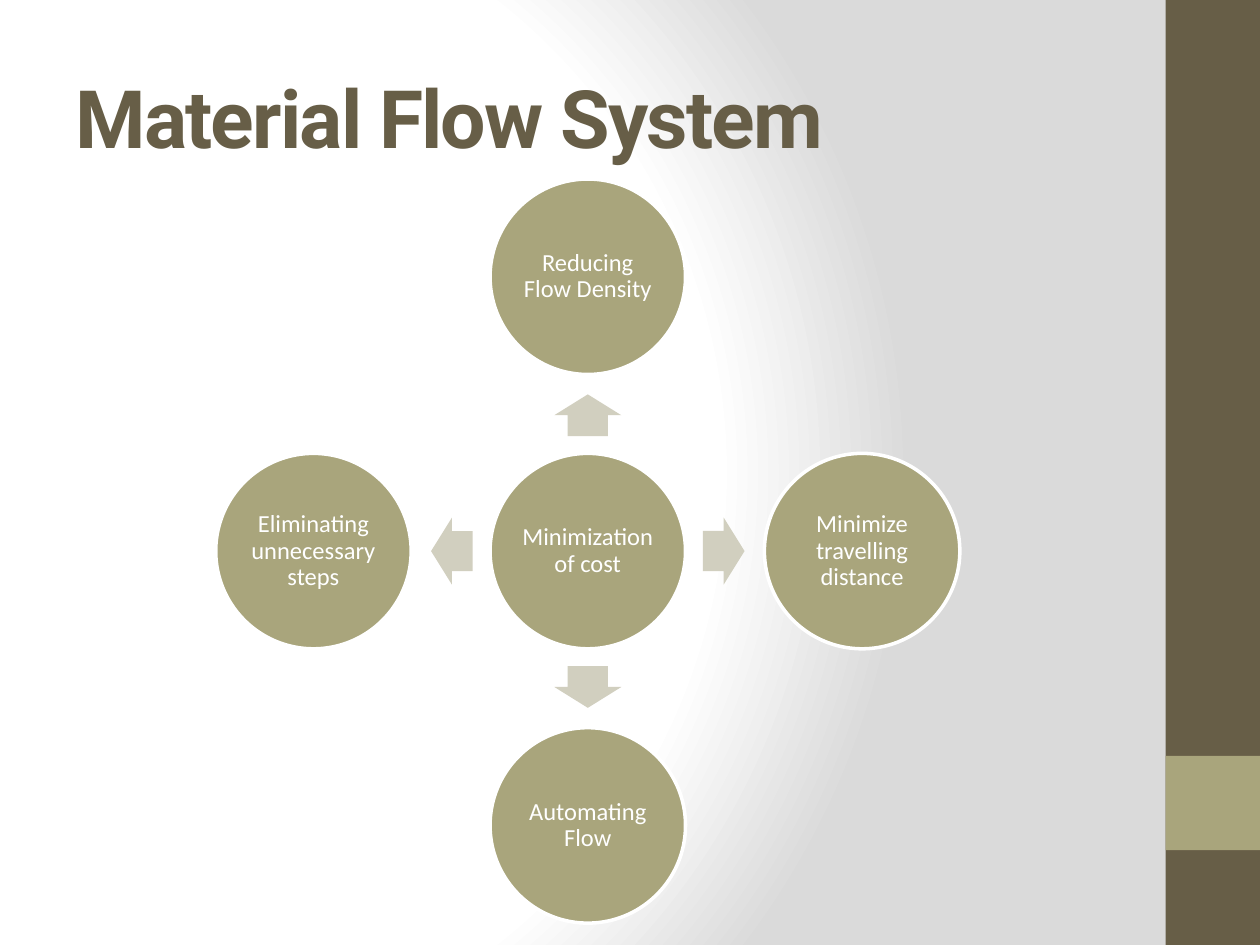
from pptx import Presentation
from pptx.dml.color import RGBColor
from pptx.enum.shapes import MSO_SHAPE as Kind
from pptx.enum.text import MSO_ANCHOR as Anchor, PP_ALIGN as Align
from pptx.oxml import parse_xml
from pptx.oxml.ns import nsdecls
from pptx.util import Cm, Pt

BROWN, OLIVE, PALE, WHITE = "675E47", "A9A57C", "D1CFBF", "FFFFFF"


def paint(item, tint):
    item.rgb = RGBColor.from_string(tint)


class Deck:
    """Holds the style and the current slide, and draws each kind of element."""

    def __init__(self, wide, high):
        self.file = Presentation()
        self.file.slide_width, self.file.slide_height = Cm(wide), Cm(high)
        self.slide = self.file.slides.add_slide(self.file.slide_layouts[6])

    def glow(self, stops):
        marks = "".join(
            f'<a:gs pos="{spot * 1000}"><a:srgbClr val="{tint}"/></a:gs>'
            for spot, tint in stops
        )
        back = parse_xml(
            f'<p:bg {nsdecls("p", "a")}><p:bgPr><a:gradFill rotWithShape="1">'
            f'<a:gsLst>{marks}</a:gsLst><a:path path="circle">'
            '<a:fillToRect l="20000" t="50000" r="100000" b="50000"/></a:path>'
            "</a:gradFill><a:effectLst/></p:bgPr></p:bg>"
        )
        self.slide.element.cSld.insert(0, back)

    def shape(self, kind, left, top, wide, high, tint):
        form = self.slide.shapes.add_shape(
            kind, Cm(left), Cm(top), Cm(wide), Cm(high)
        )
        form.shadow.inherit = False
        form.fill.solid()
        paint(form.fill.fore_color, tint)
        form.line.fill.background()
        return form

    def label(self, frame, text, font, size, tint, bold=False):
        frame.word_wrap = True
        frame.vertical_anchor = Anchor.MIDDLE
        run = frame.paragraphs[0].add_run()
        run.text = text
        run.font.name, run.font.size, run.font.bold = font, Pt(size), bold
        paint(run.font.color, tint)
        return run

    def title(self, text, left, top, wide, high):
        box = self.slide.shapes.add_textbox(Cm(left), Cm(top), Cm(wide), Cm(high))
        run = self.label(box.text_frame, text, "Roboto", 46, BROWN, True)
        run.font._element.set("spc", "-100")

    def disc(self, text, x, y, size=3.94):
        form = self.shape(
            Kind.OVAL, x - size / 2, y - size / 2, size, size, OLIVE
        )
        form.line.width = Pt(2)
        paint(form.line.color, WHITE)
        frame = form.text_frame
        frame.margin_left = frame.margin_right = Cm(0.05)
        frame.margin_top = frame.margin_bottom = Cm(0.05)
        self.label(frame, text, "Calibri", 14, WHITE)
        frame.paragraphs[0].alignment = Align.CENTER
        frame.paragraphs[0].line_spacing = 0.9

    def arrow(self, x, y, turn, wide=0.84, high=1.35):
        form = self.shape(
            Kind.RIGHT_ARROW, x - wide / 2, y - high / 2, wide, high, PALE
        )
        form.adjustments[0], form.adjustments[1] = 0.6, 0.5
        form.rotation = turn


def main():
    deck = Deck(25.4, 19.05)
    deck.glow([(0, WHITE), (75, WHITE), (100, "DADADA")])
    deck.shape(Kind.RECTANGLE, 23.5, 0, 1.9, 19.05, BROWN)
    deck.shape(Kind.RECTANGLE, 23.5, 15.24, 1.9, 1.9, OLIVE)
    deck.title("Material Flow System", 1.27, 0.76, 21.16, 3.18)

    x, y, reach, gap = 11.85, 11.11, 5.53, 2.74
    deck.disc("Minimization of cost", x, y)
    spokes = [
        ("Reducing Flow Density", 0, -1, 270),
        ("Minimize travelling distance", 1, 0, 0),
        ("Automating Flow", 0, 1, 90),
        ("Eliminating unnecessary steps", -1, 0, 180),
    ]
    for text, dx, dy, turn in spokes:
        deck.arrow(x + dx * gap, y + dy * gap, turn)
        deck.disc(text, x + dx * reach, y + dy * reach)
    deck.file.save("out.pptx")


if __name__ == "__main__":
    main()
